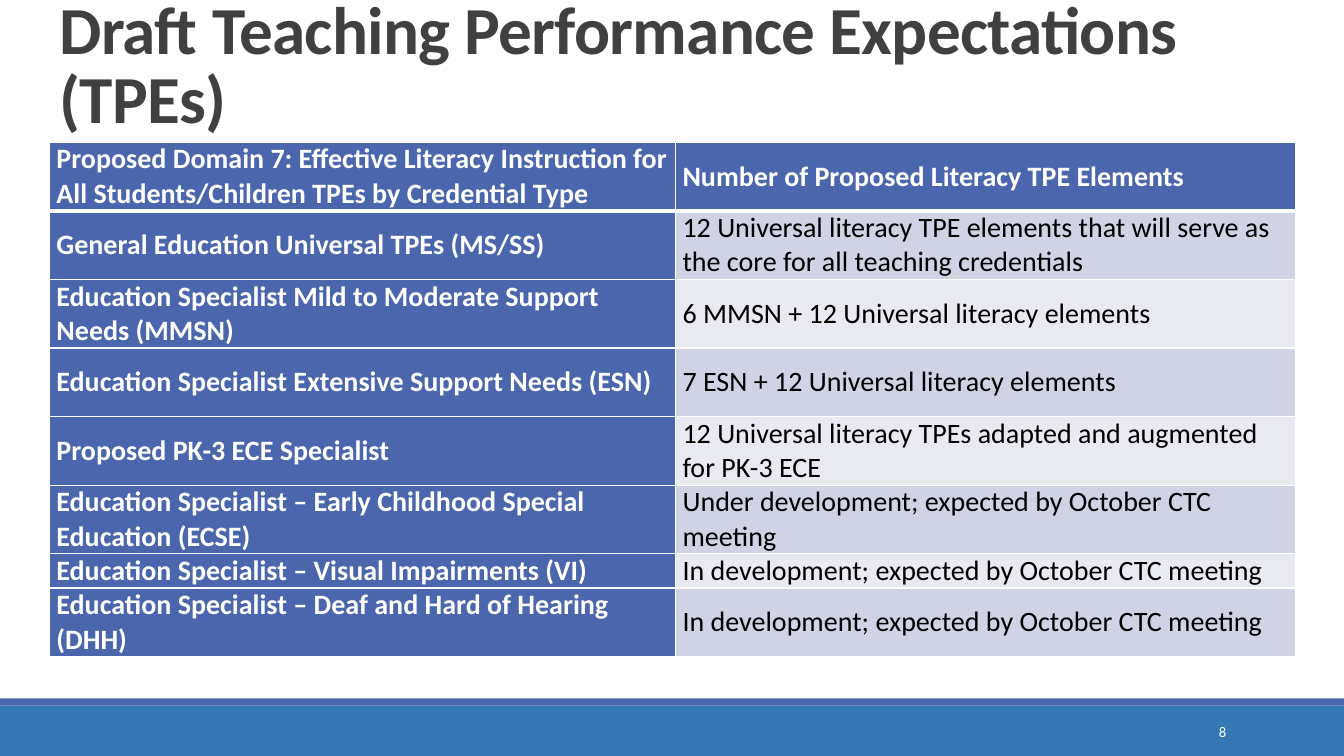
from typing import NamedTuple

from lxml.etree import SubElement
from pptx import Presentation
from pptx.dml.color import RGBColor
from pptx.enum.shapes import MSO_SHAPE
from pptx.enum.text import MSO_ANCHOR, MSO_AUTO_SIZE, PP_ALIGN
from pptx.oxml.ns import qn
from pptx.util import Inches, Pt

WHITE = RGBColor(0xFF, 0xFF, 0xFF)
BLACK = RGBColor(0, 0, 0)
GRAY = RGBColor(0x40, 0x40, 0x40)
NAVY = RGBColor(0x4A, 0x66, 0xAC)
BLUE = RGBColor(0x34, 0x77, 0xB2)
BANDS = (RGBColor(0xD0, 0xD3, 0xE3), RGBColor(0xE9, 0xEA, 0xF1))


class Bar(NamedTuple):
    top: float
    height: float
    color: RGBColor


class Row(NamedTuple):
    label: str
    count: str
    height: float = 0.68


BARS = [Bar(7, 0.5, BLUE), Bar(6.93, 0.07, NAVY)]
COLS = (6.21, 6.15)
ROWS = [
    Row("Proposed Domain 7: Effective Literacy Instruction for All Students/Children TPEs by Credential Type",
        "Number of Proposed Literacy TPE Elements"),
    Row("General Education Universal TPEs (MS/SS)",
        "12 Universal literacy TPE elements that will serve as the core for all teaching credentials"),
    Row("Education Specialist Mild to Moderate Support Needs (MMSN)",
        "6 MMSN + 12 Universal literacy elements"),
    Row("Education Specialist Extensive Support Needs (ESN)",
        "7 ESN + 12 Universal literacy elements"),
    Row("Proposed PK-3 ECE Specialist",
        "12 Universal literacy TPEs adapted and augmented for PK-3 ECE"),
    Row("Education Specialist – Early Childhood Special Education (ECSE)",
        "Under development; expected by October CTC meeting"),
    Row("Education Specialist – Visual Impairments (VI)",
        "In development; expected by October CTC meeting", 0.34),
    Row("Education Specialist – Deaf and Hard of Hearing (DHH)",
        "In development; expected by October CTC meeting"),
]


def write(frame, text: str, *, size: float, color: RGBColor, bold: bool = False,
          align=PP_ALIGN.LEFT, space: float = 1.0):
    frame.word_wrap = True
    para = frame.paragraphs[0]
    para.alignment = align
    para.line_spacing = space
    run = para.add_run()
    run.text = text
    font = run.font
    font.name = "Calibri"
    font.size = Pt(size)
    font.bold = bold
    font.color.rgb = color
    return run


def add_bar(slide, bar: Bar) -> None:
    shape = slide.shapes.add_shape(MSO_SHAPE.RECTANGLE, 0, Inches(bar.top),
                                   Inches(13.33), Inches(bar.height))
    shape.shadow.inherit = False
    shape.fill.solid()
    shape.fill.fore_color.rgb = bar.color
    shape.line.fill.background()


def add_title(slide, text: str) -> None:
    title = slide.shapes.title
    title.left, title.top = Inches(0.49), Inches(-0.18)
    title.width, title.height = Inches(12.59), Inches(1.59)
    frame = title.text_frame
    frame.auto_size = MSO_AUTO_SIZE.NONE
    frame.vertical_anchor = MSO_ANCHOR.BOTTOM
    run = write(frame, text, size=48, color=GRAY, bold=True, space=0.85)
    run.font._element.set("spc", "-50")


def add_edges(cell, top: float, bottom: float) -> None:
    props = cell._tc.get_or_add_tcPr()
    for side, width in (("L", 1), ("R", 1), ("T", top), ("B", bottom)):
        line = SubElement(props, qn(f"a:ln{side}"), w=str(Pt(width)))
        fill = SubElement(line, qn("a:solidFill"))
        SubElement(fill, qn("a:srgbClr"), val=str(WHITE))


def add_grid(slide, rows: list[Row]) -> None:
    height = sum(row.height for row in rows)
    table = slide.shapes.add_table(len(rows), len(COLS), Inches(0.49), Inches(1.41),
                                   Inches(sum(COLS)), Inches(height)).table
    table.first_col = True
    for col, width in zip(table.columns, COLS):
        col.width = Inches(width)
    for i, row in enumerate(rows):
        table.rows[i].height = Inches(row.height)
        for j, text in enumerate((row.label, row.count)):
            cell = table.cell(i, j)
            head = i == 0 or j == 0
            add_edges(cell, top=3 if i == 1 else 1, bottom=3 if i == 0 else 1)
            cell.fill.solid()
            cell.fill.fore_color.rgb = NAVY if head else BANDS[(i - 1) % 2]
            cell.margin_left = cell.margin_right = Inches(0.07)
            cell.margin_top = cell.margin_bottom = 0
            cell.vertical_anchor = MSO_ANCHOR.MIDDLE
            write(cell.text_frame, text, size=20, color=WHITE if head else BLACK, bold=head)


def add_page(slide, text: str) -> None:
    box = slide.shapes.add_textbox(Inches(10.83), Inches(7.06), Inches(1.43), Inches(0.4))
    box.text_frame.vertical_anchor = MSO_ANCHOR.MIDDLE
    write(box.text_frame, text, size=10.5, color=WHITE, align=PP_ALIGN.RIGHT)


def main() -> None:
    deck = Presentation()
    deck.slide_width, deck.slide_height = Inches(13.33), Inches(7.5)
    slide = deck.slides.add_slide(deck.slide_layouts[5])
    for bar in BARS:
        add_bar(slide, bar)
    add_title(slide, "Draft Teaching Performance Expectations (TPEs)")
    add_grid(slide, ROWS)
    add_page(slide, "8")
    deck.save("out.pptx")


if __name__ == "__main__":
    main()
